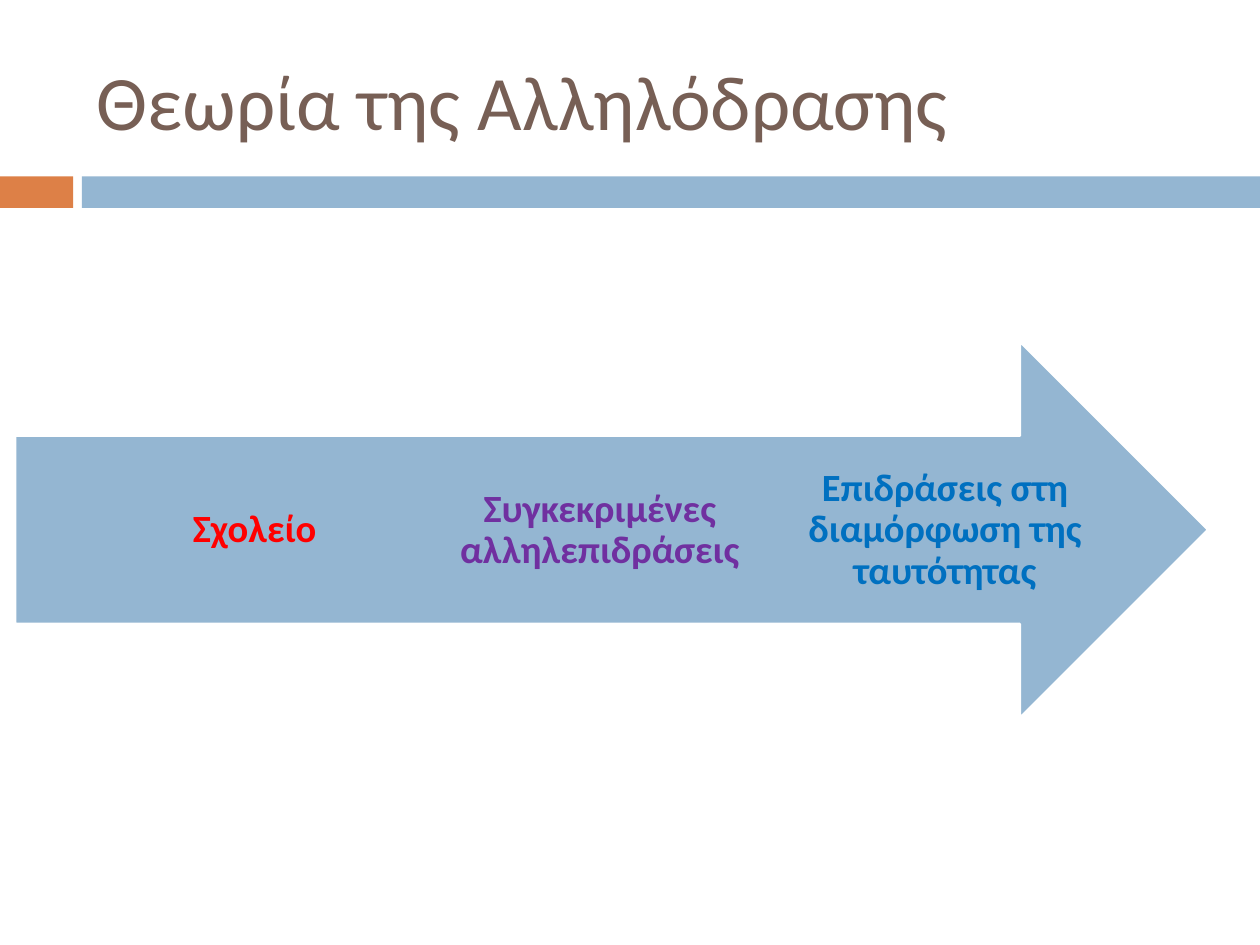
from pptx import Presentation
from pptx.dml.color import RGBColor
from pptx.enum.shapes import MSO_SHAPE
from pptx.enum.text import MSO_ANCHOR, PP_ALIGN
from pptx.util import Inches, Pt

FONT = "Calibri"
WHITE = RGBColor(0xFF, 0xFF, 0xFF)
ORANGE = RGBColor(0xDD, 0x80, 0x47)
LIGHT_BLUE = RGBColor(0x94, 0xB6, 0xD2)
BROWN = RGBColor(0x77, 0x5F, 0x55)
RED = RGBColor(0xFF, 0x00, 0x00)
PURPLE = RGBColor(0x70, 0x30, 0xA0)
BLUE = RGBColor(0x00, 0x70, 0xC0)

STAGES = [
    ("Σχολείο", RED),
    ("Συγκεκριμένες αλληλεπιδράσεις", PURPLE),
    ("Επιδράσεις στη διαμόρφωση της ταυτότητας", BLUE),
]
STAGE_LEFT, STAGE_STEP = 0.88, 2.74


def add_block(s, kind, x, y, w, h, fill, line=None):
    sp = s.shapes.add_shape(kind, Inches(x), Inches(y), Inches(w), Inches(h))
    sp.shadow.inherit = False
    sp.fill.solid()
    sp.fill.fore_color.rgb = fill
    if line is None:
        sp.line.fill.background()
    else:
        sp.line.color.rgb = line
        sp.line.width = Pt(1.5)
    return sp


def add_text(s, text, x, y, w, h, size, color, bold=False):
    sp = s.shapes.add_textbox(Inches(x), Inches(y), Inches(w), Inches(h))
    tf = sp.text_frame
    tf.word_wrap = True
    tf.vertical_anchor = MSO_ANCHOR.MIDDLE
    tf.text = text
    font = tf.paragraphs[0].runs[0].font
    font.name, font.size, font.bold = FONT, Pt(size), bold
    font.color.rgb = color
    return tf


def add_stage(s, text, x, color):
    tf = add_text(s, text, x, 3.46, 2.28, 1.5, 22, color, bold=True)
    tf.margin_left = tf.margin_right = 0
    tf.margin_top = tf.margin_bottom = Inches(0.24)
    p = tf.paragraphs[0]
    p.alignment = PP_ALIGN.CENTER
    p.line_spacing = 0.9


def main():
    prs = Presentation()
    prs.slide_width, prs.slide_height = Inches(10), Inches(7.5)
    s = prs.slides.add_slide(prs.slide_layouts[6])

    # Title and the band below it
    add_block(s, MSO_SHAPE.RECTANGLE, 0, 1.4, 0.58, 0.25, ORANGE)
    add_block(s, MSO_SHAPE.RECTANGLE, 0.65, 1.4, 9.35, 0.25, LIGHT_BLUE)
    add_text(s, "Θεωρία της Αλληλόδρασης", 0.67, 0.25, 8.92, 1.08, 44, BROWN)

    # Process arrow with its stages
    add_block(s, MSO_SHAPE.RIGHT_ARROW, 0.12, 2.71, 9.47, 2.99, LIGHT_BLUE, WHITE)
    for i, (text, color) in enumerate(STAGES):
        add_stage(s, text, STAGE_LEFT + i * STAGE_STEP, color)

    prs.save("out.pptx")


if __name__ == "__main__":
    main()
